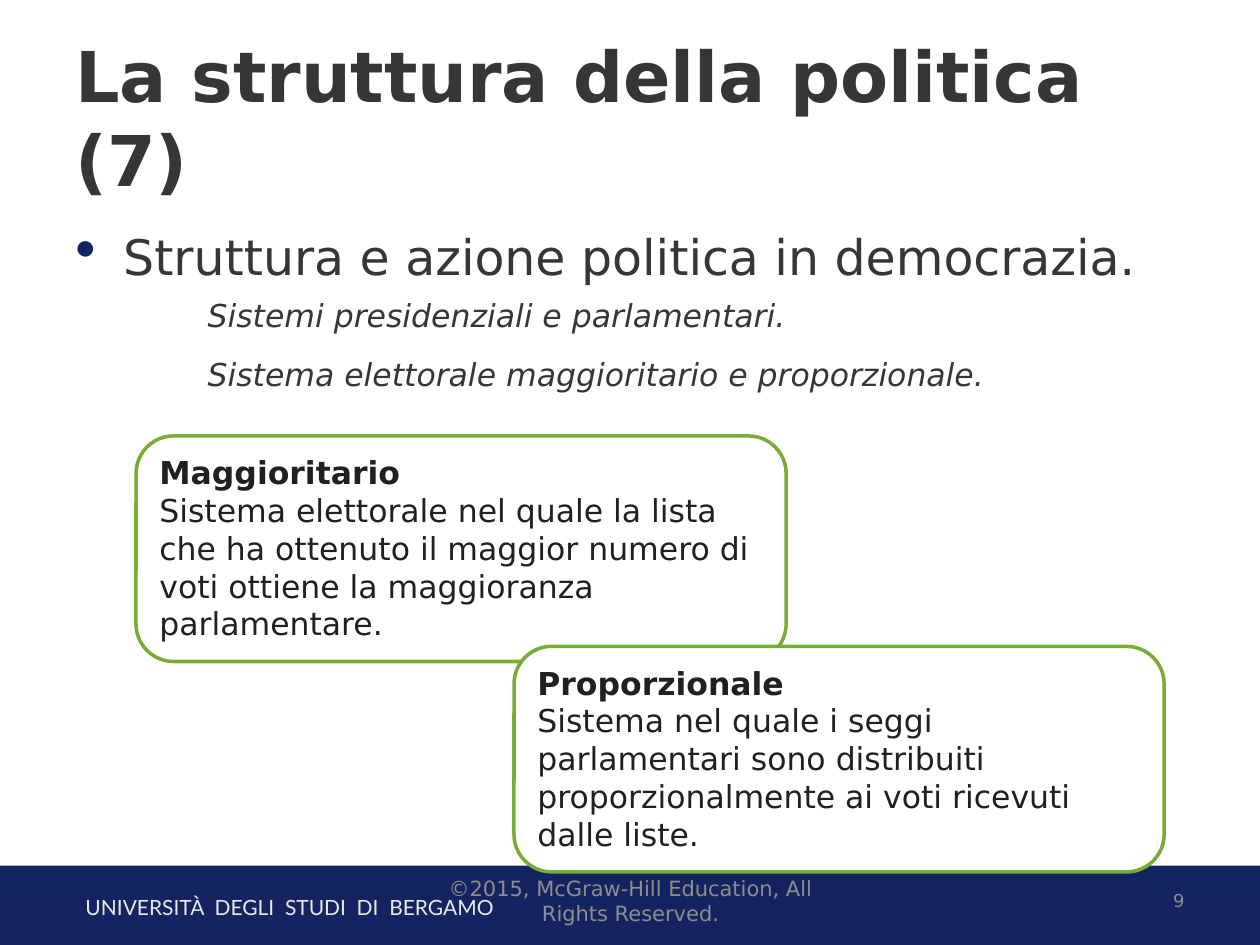
"""Build a slide on the structure of politics and electoral systems."""
from lxml import etree
from pptx import Presentation
from pptx import util as u
from pptx.dml.color import RGBColor
from pptx.enum import shapes, text
from pptx.oxml.ns import qn

NAVY, GREEN, WHITE = "152460", "78AC35", "FFFFFF"
DARK, BLACK, GREY, PALE = "363636", "202020", "8D8D8D", "E9E9E9"


def color(value):
    """Return the colour for a hex string."""
    return RGBColor.from_string(value)


def place(left, top, width, height):
    """Return a position and size given in inches."""
    return [u.Inches(value) for value in (left, top, width, height)]


def add_bullet(para, tint, percent, char="•"):
    """Give a paragraph a coloured, scaled bullet."""
    props = para._p.get_or_add_pPr()
    holder = etree.SubElement(props, qn("a:buClr"))
    etree.SubElement(holder, qn("a:srgbClr"), val=tint)
    etree.SubElement(props, qn("a:buSzPct"), val=str(percent * 1000))
    etree.SubElement(props, qn("a:buChar"), char=char)


def write(para, words, size=18, tint=DARK, font="DejaVu Sans", bold=False,
          italic=False, align=text.PP_ALIGN.LEFT):
    """Add a formatted span of text to a paragraph."""
    para.alignment = align
    span = para.add_run()
    span.text = words
    span.font.name, span.font.size = font, u.Pt(size)
    span.font.bold, span.font.italic = bold, italic
    span.font.color.rgb = color(tint)


def add_text(page, bounds, words="", anchor=text.MSO_ANCHOR.TOP, **style):
    """Add a wrapped text box and return its frame."""
    frame = page.shapes.add_textbox(*place(*bounds)).text_frame
    frame.word_wrap = True
    frame.vertical_anchor = anchor
    if words:
        write(frame.paragraphs[0], words, **style)
    return frame


def add_box(page, kind, bounds, fill, line=None):
    """Add a filled shape with an optional outline."""
    box = page.shapes.add_shape(kind, *place(*bounds))
    box.shadow.inherit = False
    box.fill.solid()
    box.fill.fore_color.rgb = color(fill)
    if line:
        box.line.color.rgb = color(line)
        box.line.width = u.Pt(2)
    else:
        box.line.fill.background()
    return box


def add_definition(page, left, top, term, meaning):
    """Add a rounded box with a bold term above its meaning."""
    box = add_box(page, shapes.MSO_SHAPE.ROUNDED_RECTANGLE,
                  (left, top, 5.16, 1.79), WHITE, GREEN)
    frame = box.text_frame
    frame.word_wrap = True
    frame.vertical_anchor = text.MSO_ANCHOR.TOP
    write(frame.paragraphs[0], term, tint=BLACK, bold=True)
    write(frame.add_paragraph(), meaning, tint=BLACK)


def add_outline(page, heading, details):
    """Add the bulleted heading with its indented details."""
    frame = add_text(page, (0.5, 1.75, 9, 4.95))
    para = frame.paragraphs[0]
    props = para._p.get_or_add_pPr()
    props.set("marL", str(u.Inches(0.38)))
    props.set("indent", str(-u.Inches(0.38)))
    add_bullet(para, NAVY, 122)
    write(para, heading, size=28)
    for detail in details:
        para = frame.add_paragraph()
        para.level = 2
        para._p.get_or_add_pPr().set("marL", str(u.Inches(1.05)))
        para.space_before = para.space_after = u.Pt(6)
        write(para, detail, italic=True, align=text.PP_ALIGN.JUSTIFY)


def main():
    """Build and save the slide."""
    deck = Presentation()
    deck.slide_width, deck.slide_height = u.Inches(10), u.Inches(7.5)
    page = deck.slides.add_slide(deck.slide_layouts[6])
    middle = text.MSO_ANCHOR.MIDDLE

    add_box(page, shapes.MSO_SHAPE.RECTANGLE, (0, 6.87, 10, 0.68), NAVY)
    add_text(page, (0.58, 7.05, 5.82, 0.3),
             "UNIVERSITÀ  DEGLI  STUDI  DI  BERGAMO",
             size=12, tint=PALE, font="Lato")
    add_text(page, (0.5, 0.3, 9, 1.25), "La struttura della politica (7)",
             middle, size=40, bold=True)
    add_outline(page, "Struttura e azione politica in democrazia.",
                ["Sistemi presidenziali e parlamentari.",
                 "Sistema elettorale maggioritario e proporzionale."])
    add_text(page, (7.17, 6.95, 2.33, 0.4), "9", middle, size=10.2,
             tint=GREY, align=text.PP_ALIGN.RIGHT)
    add_definition(page, 1.08, 3.46, "Maggioritario",
                   "Sistema elettorale nel quale la lista che ha ottenuto il "
                   "maggior numero di voti ottiene la maggioranza parlamentare.")
    add_definition(page, 4.08, 5.13, "Proporzionale",
                   "Sistema nel quale i seggi parlamentari sono distribuiti "
                   "proporzionalmente ai voti ricevuti dalle liste.")
    add_text(page, (3.42, 6.95, 3.17, 0.4),
             "©2015, McGraw-Hill Education, All Rights Reserved.", middle,
             size=12, tint=GREY, align=text.PP_ALIGN.CENTER)
    deck.save("out.pptx")


if __name__ == "__main__":
    main()
